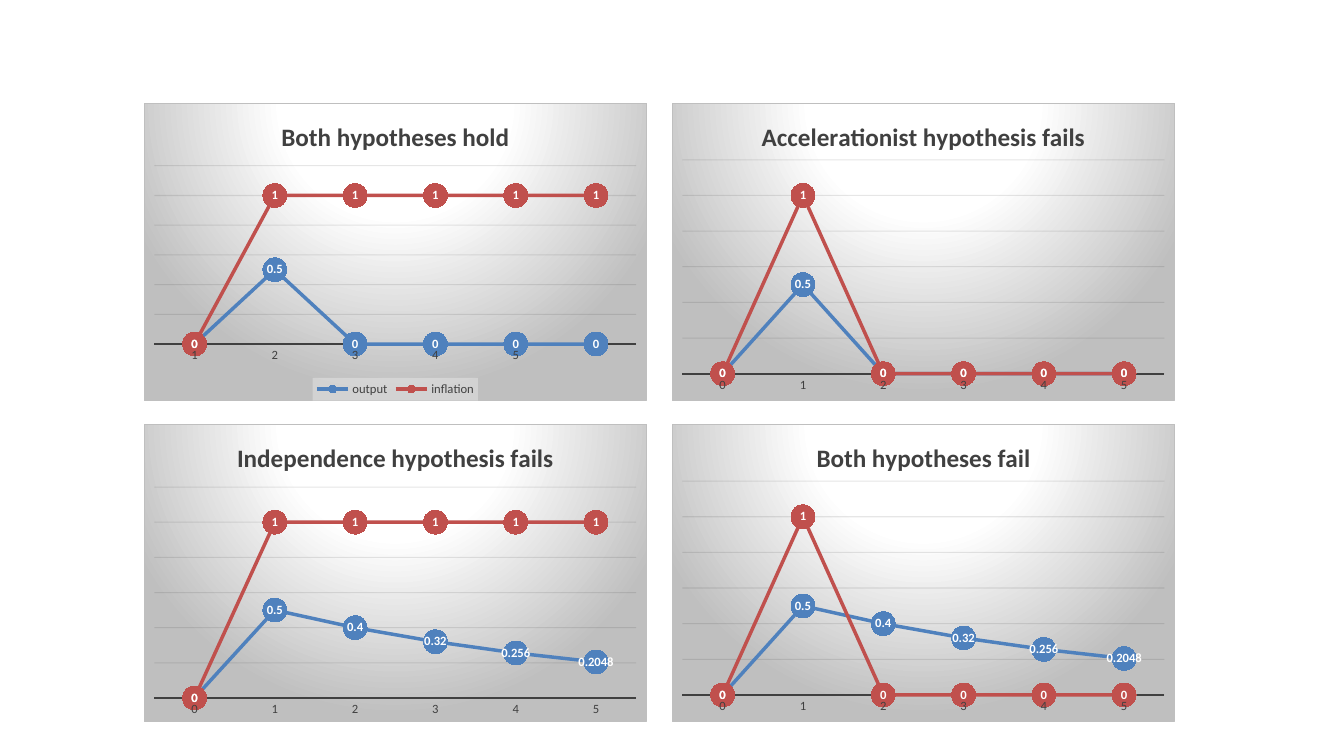
from lxml.etree import SubElement
from pptx import Presentation
from pptx.chart.data import CategoryChartData
from pptx.dml.color import RGBColor
from pptx.enum.chart import (XL_CHART_TYPE, XL_LABEL_POSITION, XL_LEGEND_POSITION,
                             XL_MARKER_STYLE, XL_TICK_MARK)
from pptx.oxml import parse_xml
from pptx.oxml.ns import nsdecls, qn
from pptx.util import Pt

PX = 9525
BLUE, RED, DARK, WHITE = "4F81BD", "C0504D", "404040", "FFFFFF"
CHART_WIDTH, CHART_HEIGHT = 479, 284
COLUMNS, ROWS = (137, 640), (98, 404)

BACKGROUND = f"""<c:spPr {nsdecls('c', 'a')}>
  <a:gradFill><a:gsLst>
    <a:gs pos="0"><a:srgbClr val="FFFFFF"/></a:gs>
    <a:gs pos="39000"><a:srgbClr val="FFFFFF"/></a:gs>
    <a:gs pos="100000"><a:srgbClr val="BFBFBF"/></a:gs>
  </a:gsLst><a:path path="circle">
    <a:fillToRect l="50000" t="-80000" r="50000" b="180000"/>
  </a:path></a:gradFill>
  <a:ln w="9525"><a:solidFill><a:srgbClr val="BFBFBF"/></a:solidFill></a:ln>
</c:spPr>"""
LEGEND_FILL = f"""<c:spPr {nsdecls('c', 'a')}><a:solidFill>
  <a:srgbClr val="F2F2F2"><a:alpha val="39000"/></a:srgbClr>
</a:solidFill></c:spPr>"""

FADING = (0, 0.5, 0.4, 0.32, 0.256, 0.2048)
BRIEF = (0, 0.5, 0, 0, 0, 0)
LASTING_INFLATION = (0, 1, 1, 1, 1, 1)
BRIEF_INFLATION = (0, 1, 0, 0, 0, 0)
PERIODS = ("0", "1", "2", "3", "4", "5")
DEFAULT_NAMES = ("Series 1", "Series 2")
PANELS = (
    ("Both hypotheses hold", 0, 0, ("1", "2", "3", "4", "5", ""),
     ("output", "inflation"), BRIEF, LASTING_INFLATION, 0.21, 0.6),
    ("Independence hypothesis fails", 0, 1, PERIODS,
     DEFAULT_NAMES, FADING, LASTING_INFLATION, 0.21, 0.71),
    ("Accelerationist hypothesis fails", 1, 0, PERIODS,
     DEFAULT_NAMES, BRIEF, BRIEF_INFLATION, 0.19, 0.72),
    ("Both hypotheses fail", 1, 1, PERIODS,
     DEFAULT_NAMES, FADING, BRIEF_INFLATION, 0.19, 0.72),
)


def rgb(value):
    return RGBColor.from_string(value)


def style_font(font, size, color, bold=False):
    font.name = "Calibri"
    font.size = Pt(size)
    font.bold = bold
    font.color.rgb = rgb(color)


presentation = Presentation()
presentation.slide_width = 1280 * PX
presentation.slide_height = 720 * PX
slide = presentation.slides.add_slide(presentation.slide_layouts[6])

for title, column, row, periods, names, output, inflation, plot_top, plot_height in PANELS:
    chart_data = CategoryChartData()
    chart_data.categories = periods
    for name, values in zip(names, (output, inflation)):
        chart_data.add_series(name, values)
    chart = slide.shapes.add_chart(
        XL_CHART_TYPE.LINE_MARKERS, COLUMNS[column] * PX, ROWS[row] * PX,
        CHART_WIDTH * PX, CHART_HEIGHT * PX, chart_data).chart
    style_font(chart.font, 10, "000000")

    chart_space = chart.element
    chart_space.find(qn("c:chart")).addnext(parse_xml(BACKGROUND))
    corners = parse_xml(f'<c:roundedCorners {nsdecls("c")} val="0"/>')
    chart_space.find(qn("c:date1904")).addnext(corners)

    chart.has_title = True
    paragraph = chart.chart_title.text_frame.paragraphs[0]
    paragraph.text = title
    style_font(paragraph.font, 18, DARK, True)
    chart.chart_title.include_in_layout = False

    plot_area = chart_space.find(qn("c:chart")).find(qn("c:plotArea"))
    for old_layout in plot_area.findall(qn("c:layout")):
        plot_area.remove(old_layout)
    layout = parse_xml(f"<c:layout {nsdecls('c')}/>")
    manual = SubElement(layout, qn("c:manualLayout"))
    for tag, value in (("layoutTarget", "inner"), ("xMode", "edge"), ("yMode", "edge"),
                       ("x", 0.02), ("y", plot_top), ("w", 0.96), ("h", plot_height)):
        SubElement(manual, qn(f"c:{tag}")).set("val", str(value))
    plot_area.insert(0, layout)

    category_axis = chart.category_axis
    category_axis.major_tick_mark = XL_TICK_MARK.NONE
    category_axis.minor_tick_mark = XL_TICK_MARK.NONE
    category_axis.format.line.color.rgb = rgb(DARK)
    category_axis.format.line.width = Pt(1.5)
    style_font(category_axis.tick_labels.font, 9, DARK)

    value_axis = chart.value_axis
    value_axis.visible = False
    value_axis.minimum_scale = 0
    value_axis.maximum_scale = 1.2
    value_axis.major_unit = 0.2
    gridlines = value_axis.major_gridlines
    gridlines.format.line.color.rgb = rgb("0D0D0D")
    gridlines.format.line.width = Pt(0.75)
    for color in value_axis._element.find(qn("c:majorGridlines")).iter(qn("a:srgbClr")):
        SubElement(color, qn("a:alpha")).set("val", "10000")

    for series, color in zip(chart.plots[0].series, (BLUE, RED)):
        series.smooth = False
        series.format.line.color.rgb = rgb(color)
        series.format.line.width = Pt(2.5)
        marker = series.marker
        marker.style = XL_MARKER_STYLE.CIRCLE
        marker.size = 17
        marker.format.fill.solid()
        marker.format.fill.fore_color.rgb = rgb(color)
        marker.format.line.fill.background()
        labels = series.data_labels
        labels.show_value = True
        labels.position = XL_LABEL_POSITION.CENTER
        style_font(labels.font, 9, WHITE, True)
    chart.plots[0].vary_by_categories = False

    chart.has_legend = names != DEFAULT_NAMES
    if chart.has_legend:
        legend = chart.legend
        legend.position = XL_LEGEND_POSITION.BOTTOM
        legend.include_in_layout = False
        style_font(legend.font, 9, DARK)
        legend._element.find(qn("c:overlay")).addnext(parse_xml(LEGEND_FILL))

presentation.save("out.pptx")
